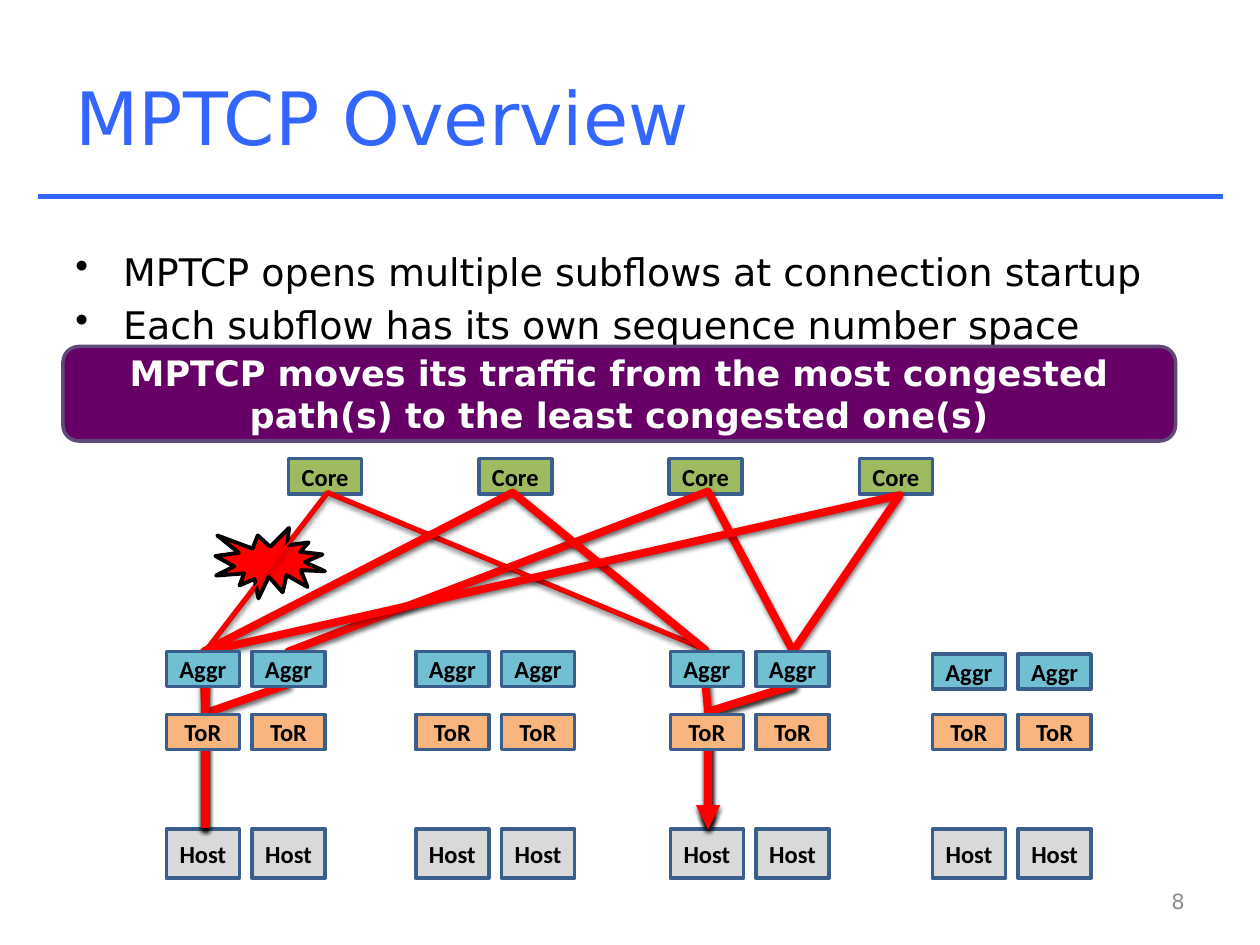
from pptx import Presentation
from pptx.dml.color import RGBColor
from pptx.enum.shapes import MSO_CONNECTOR, MSO_SHAPE
from pptx.enum.text import MSO_ANCHOR, PP_ALIGN
from pptx.oxml.ns import qn
from pptx.util import Inches, Pt
from lxml import etree

RECT, ROUND = MSO_SHAPE.RECTANGLE, MSO_SHAPE.ROUNDED_RECTANGLE
BURST = MSO_SHAPE.EXPLOSION1
MID, TOP = MSO_ANCHOR.MIDDLE, MSO_ANCHOR.TOP
LEFT, MIDDLE, RIGHT = PP_ALIGN.LEFT, PP_ALIGN.CENTER, PP_ALIGN.RIGHT

BLUE = RGBColor(0x33, 0x66, 0xFF)
BLACK = RGBColor(0, 0, 0)
WHITE = RGBColor(0xFF, 0xFF, 0xFF)
GRAY = RGBColor(0x8C, 0x8C, 0x8C)
RED = RGBColor(0xFF, 0, 0)
EDGE = RGBColor(0x3A, 0x5F, 0x8C)
GREEN = RGBColor(0x9E, 0xBB, 0x61)
SILVER = RGBColor(0xD9, 0xD9, 0xD9)
TEAL = RGBColor(0x70, 0xBF, 0xD3)
ORANGE = RGBColor(0xF8, 0xB5, 0x7E)
PURPLE = RGBColor(0x66, 0, 0x66)
PLUM = RGBColor(0x5F, 0x4A, 0x78)

deck = Presentation()
deck.slide_width, deck.slide_height = Inches(10), Inches(7.5)
COL, ROW = deck.slide_width / 100, deck.slide_height / 75
slide = deck.slides.add_slide(deck.slide_layouts[6])
shapes = slide.shapes


def write(shape, lines, color, font, align=LEFT, anchor=MID, wrap=True):
    """Fill a shape with one paragraph per line; font is a dict of values."""
    frame = shape.text_frame
    frame.word_wrap, frame.vertical_anchor = wrap, anchor
    frame.text = "\n".join(lines)
    for para in frame.paragraphs:
        para.alignment = align
        for name, value in font.items():
            setattr(para.font, name, value)
        para.font.color.rgb = color


def block(kind, area, fill, edge, width):
    """Add a filled, outlined shape; area is in columns and rows."""
    x, y, w, h = area
    shape = shapes.add_shape(kind, int(x * COL), int(y * ROW),
                             int(w * COL), int(h * ROW))
    shape.shadow.inherit = False
    shape.fill.solid()
    shape.fill.fore_color.rgb = fill
    shape.line.color.rgb = edge
    shape.line.width = Pt(width)
    return shape


# Title, rule and page number
rule = shapes.add_connector(MSO_CONNECTOR.STRAIGHT, int(97.1 * COL), int(15.6 * ROW),
                            int(3 * COL), int(15.6 * ROW))
rule.line.color.rgb, rule.line.width = BLUE, Pt(3)
etree.SubElement(rule._element.spPr, qn("a:effectLst"))

for text, (x, y, w, h), size, color, align in (
    ("MPTCP Overview", (5, 3, 90, 12.5), 42, BLUE, LEFT),
    ("8", (71.7, 69.5, 23.3, 4), 12, GRAY, RIGHT),
):
    box = shapes.add_textbox(int(x * COL), int(y * ROW), int(w * COL), int(h * ROW))
    write(box, [text], color, {"name": "DejaVu Sans", "size": Pt(size)}, align)

# Nodes and subflows, from back to front
pods = [13.2, 33, 53.2, 74]
slots = [pod + step for pod in pods for step in (0, 6.8)]
cores = [22.9 + 15.1 * i for i in range(4)]
label = {"name": "Calibri", "size": Pt(14), "bold": True}
tiers = {
    "Core": (cores, 36.4, 2.8, GREEN),
    "Host": (slots, 65.8, 3.9, SILVER),
    "Aggr": (slots, 51.7, 2.8, TEAL),
    "ToR": (slots, 56.7, 2.8, ORANGE),
}
# core column and row, left and right Aggr columns, final line width
flows = [
    (56.2, 39, 22.9, 62.9, 4.5),
    (26, 39.1, 16.3, 56.1, 1),
    (40.7, 39.1, 16.2, 56, 4.5),
    (71.4, 39.3, 16.4, 63, 4.5),
]

for stage in (("Core", "Host"), "before", "burst", "after", ("Aggr", "ToR")):
    if stage == "burst":
        block(BURST, (17.1, 41.9, 8.7, 5.6), RED, BLACK, 2.25)
    elif stage in ("before", "after"):
        for core, peak, up, down, width in flows:
            points = [(16.3, 65.7), (16.3, 56.6), (up, 54.3), (up, 51.7), (core, peak),
                      (down, 51.6), (down, 54.4), (56.2, 56.5), (56.2, 65.8)]
            spots = [(int(x * COL), int(y * ROW)) for x, y in points]
            pen = shapes.build_freeform(*spots[0])
            pen.add_line_segments(spots[1:], close=False)
            flow = pen.convert_to_shape()
            flow.fill.background()
            flow.line.color.rgb = RED
            flow.line.width = Pt(3 if stage == "before" else width)
            etree.SubElement(flow.line._get_or_add_ln(), qn("a:tailEnd"), type="triangle")
            flow.shadow.inherit = False
            glow = etree.SubElement(flow._element.spPr.find(qn("a:effectLst")),
                                    qn("a:outerShdw"), blurRad=str(Pt(3.1)),
                                    dist=str(Pt(1.6)), dir="5400000", rotWithShape="0")
            tint = etree.SubElement(glow, qn("a:srgbClr"), val=str(BLACK))
            etree.SubElement(tint, qn("a:alpha"), val="38000")
    else:
        for name in stage:
            places, y, h, fill = tiers[name]
            for x in places:
                drop = 0.2 if name == "Aggr" and x >= pods[-1] else 0
                node = block(RECT, (x, y + drop, 5.8, h), fill, EDGE, 2)
                write(node, [name], BLACK, label, MIDDLE, wrap=False)

# Bullets and the banner
body = shapes.add_textbox(int(5 * COL), int(19.2 * ROW), int(90 * COL), int(9.2 * ROW))
write(body, ["MPTCP opens multiple subflows at connection startup",
             "Each subflow has its own sequence number space"],
      BLACK, {"name": "DejaVu Sans", "size": Pt(21.7)}, anchor=TOP)
for para in body.text_frame.paragraphs:
    para.space_before = Pt(4.3)
    props = para._p.get_or_add_pPr()
    props.set("marL", str(int(3.8 * COL)))
    props.set("indent", str(int(-3.8 * COL)))
    mark = etree.Element(qn("a:buChar"), char="•")
    props.find(qn("a:defRPr")).addprevious(mark)

banner = block(ROUND, (5, 27.5, 88.3, 7.5), PURPLE, PLUM, 2)
write(banner, ["MPTCP moves its traffic from the most congested path(s) "
               "to the least congested one(s)"],
      WHITE, {"name": "DejaVu Sans", "size": Pt(20), "bold": True}, MIDDLE)

deck.save("out.pptx")
